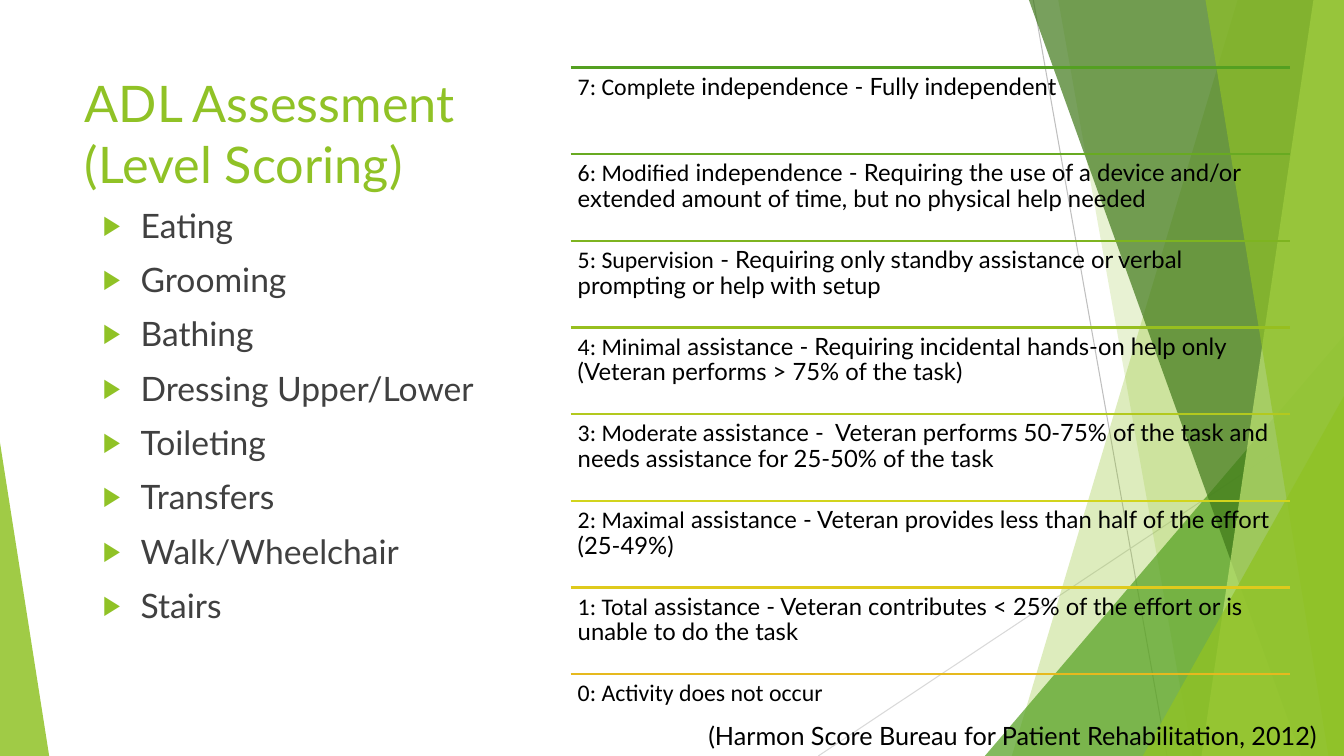
from dataclasses import dataclass

from lxml.etree import SubElement
from pptx import Presentation
from pptx.dml.color import RGBColor
from pptx.enum.shapes import MSO_CONNECTOR, MSO_SHAPE
from pptx.enum.text import MSO_ANCHOR, MSO_AUTO_SIZE, PP_ALIGN
from pptx.oxml.ns import qn
from pptx.util import Cm, Pt

GREEN = RGBColor(0x90, 0xC2, 0x26)
MID_GREEN = RGBColor(0x54, 0xA0, 0x21)
DARK_GREEN = RGBColor(0x3F, 0x78, 0x19)
LIGHT_GREEN = RGBColor(0xC0, 0xE4, 0x74)
GREY = RGBColor(0xBF, 0xBF, 0xBF)
LIGHT_GREY = RGBColor(0xD9, 0xD9, 0xD9)
TEXT_GREY = RGBColor(0x40, 0x40, 0x40)
BLACK = RGBColor(0, 0, 0)

WIDTH, HEIGHT = 33.87, 19.05
ROW_LEFT, ROW_WIDTH = 14.38, 18.13
ROW_TOP, LAST_ROW_TOP = 1.7, 16.99


@dataclass
class Facet:
    top_left: float
    bottom_left: float
    bottom_right: float
    color: RGBColor
    opacity: int


@dataclass
class Wedge:
    left: float
    top: float
    width: float
    apex: float
    color: RGBColor
    opacity: int


@dataclass
class Level:
    label: str
    detail: str
    color: RGBColor


FACETS_AND_WEDGES = [
    Facet(31.19, 25.5, WIDTH, GREEN, 30),
    Facet(26.67, 30.05, WIDTH, GREEN, 20),
    Wedge(24.82, 8.46, 9.05, 1, MID_GREEN, 72),
    Facet(25.93, 32.79, WIDTH, DARK_GREEN, 70),
    Facet(33.1, 30.28, WIDTH, LIGHT_GREEN, 70),
    Facet(30.38, 33.48, WIDTH, GREEN, 65),
    Wedge(28.8, 9.98, 5.07, 1, GREEN, 80),
    Wedge(0, 11.15, 1.24, 0, GREEN, 85),
]

ACTIVITIES = ["Eating", "Grooming", "Bathing", "Dressing Upper/Lower",
              "Toileting", "Transfers", "Walk/Wheelchair", "Stairs"]

LEVELS = [
    Level("7: Complete", " independence - Fully independent", MID_GREEN),
    Level("6: Modified", " independence - Requiring the use of a device and/or extended "
          "amount of time, but no physical help needed", RGBColor(0x68, 0xAA, 0x21)),
    Level("5: Supervision", " - Requiring only standby assistance or verbal prompting "
          "or help with setup", RGBColor(0x7E, 0xB4, 0x20)),
    Level("4: Minimal", " assistance - Requiring incidental hands-on help only "
          "(Veteran performs > 75% of the task)", RGBColor(0x97, 0xBF, 0x1F)),
    Level("3: Moderate ", "assistance -  Veteran performs 50-75% of the task and needs "
          "assistance for 25-50% of the task", RGBColor(0xB3, 0xC9, 0x1E)),
    Level("2: Maximal", " assistance - Veteran provides less than half of the effort "
          "(25-49%)", RGBColor(0xD2, 0xD4, 0x1D)),
    Level("1: Total", " assistance - Veteran contributes < 25% of the effort or is "
          "unable to do the task", RGBColor(0xDF, 0xCA, 0x1C)),
    Level("0: Activity does not occur", "", RGBColor(0xE6, 0xB9, 0x1E)),
]


def write(p, text: str, *, size: float, font: str = "Lato", color: RGBColor = BLACK) -> None:
    r = p.add_run()
    r.text = text
    r.font.size = Pt(size)
    r.font.name = font
    r.font.color.rgb = color


def place(sp, left: float, top: float, width: float, height: float) -> None:
    sp.left, sp.top, sp.width, sp.height = Cm(left), Cm(top), Cm(width), Cm(height)


def add_line(shapes, x1: float, y1: float, x2: float, y2: float,
             color: RGBColor, weight: float) -> None:
    line = shapes.add_connector(MSO_CONNECTOR.STRAIGHT, Cm(x1), Cm(y1), Cm(x2), Cm(y2))
    line.line.color.rgb = color
    line.line.width = Pt(weight)
    SubElement(line.element.spPr, qn("a:effectLst"))


def add_panel(shapes, panel: Facet | Wedge) -> None:
    if isinstance(panel, Facet):
        builder = shapes.build_freeform(Cm(panel.top_left), 0)
        builder.add_line_segments([(Cm(WIDTH), 0), (Cm(panel.bottom_right), Cm(HEIGHT)),
                                   (Cm(panel.bottom_left), Cm(HEIGHT))], close=True)
        sp = builder.convert_to_shape()
    else:
        sp = shapes.add_shape(MSO_SHAPE.ISOSCELES_TRIANGLE, Cm(panel.left), Cm(panel.top),
                              Cm(panel.width), Cm(HEIGHT - panel.top))
        sp.adjustments[0] = panel.apex
    sp.shadow.inherit = False
    sp.line.fill.background()
    sp.fill.solid()
    sp.fill.fore_color.rgb = panel.color
    color = next(sp.element.spPr.iter(qn("a:srgbClr")))
    SubElement(color, qn("a:alpha"), val=str(panel.opacity * 1000))


def add_bullet(p) -> None:
    pPr = p._p.get_or_add_pPr()
    pPr.set("marL", str(Cm(0.95)))
    pPr.set("indent", str(-Cm(0.95)))
    SubElement(SubElement(pPr, qn("a:buClr")), qn("a:srgbClr"), val=str(GREEN))
    SubElement(pPr, qn("a:buSzPct"), val="80000")
    SubElement(pPr, qn("a:buFont"), typeface="Arial")
    SubElement(pPr, qn("a:buChar"), char="▶")


def add_level(shapes, level: Level, top: float, height: float) -> None:
    add_line(shapes, ROW_LEFT, top, ROW_LEFT + ROW_WIDTH, top, level.color, 1.5)
    box = shapes.add_textbox(Cm(ROW_LEFT), Cm(top), Cm(ROW_WIDTH), Cm(height))
    tf = box.text_frame
    tf.word_wrap = True
    tf.margin_left = tf.margin_right = tf.margin_top = tf.margin_bottom = Cm(0.18)
    p = tf.paragraphs[0]
    p.line_spacing = 0.9
    write(p, level.label, size=17, font="Calibri")
    if level.detail:
        write(p, level.detail, size=17)


def fill_title(title) -> None:
    place(title, 1.88, 1.7, 10.54, 3.66)
    tf = title.text_frame
    tf.auto_size = MSO_AUTO_SIZE.NONE
    tf.vertical_anchor = MSO_ANCHOR.TOP
    p = tf.paragraphs[0]
    p.alignment = PP_ALIGN.LEFT
    write(p, "ADL Assessment", size=36, color=GREEN)
    p.add_line_break()
    write(p, "(Level Scoring)", size=36, color=GREEN)


def fill_activities(body) -> None:
    place(body, 2.34, 5.03, 10.08, 13)
    tf = body.text_frame
    tf.auto_size = MSO_AUTO_SIZE.NONE
    tf.vertical_anchor = MSO_ANCHOR.TOP
    for i, activity in enumerate(ACTIVITIES):
        p = tf.add_paragraph() if i else tf.paragraphs[0]
        p.space_before = Pt(10)
        add_bullet(p)
        write(p, activity, size=24, color=TEXT_GREY)


def main() -> None:
    prs = Presentation()
    prs.slide_width, prs.slide_height = Cm(WIDTH), Cm(HEIGHT)
    slide = prs.slides.add_slide(prs.slide_layouts[1])
    shapes = slide.shapes
    title, body = shapes.title, slide.placeholders[1]

    add_line(shapes, 26.04, 0, 29.41, HEIGHT, GREY, 0.75)
    add_line(shapes, WIDTH, 10.24, 20.62, HEIGHT, LIGHT_GREY, 0.75)
    for panel in FACETS_AND_WEDGES:
        add_panel(shapes, panel)

    fill_title(title)
    fill_activities(body)
    for sp in (title, body):
        sp.element.getparent().append(sp.element)

    pitch = (LAST_ROW_TOP - ROW_TOP) / (len(LEVELS) - 1)
    for i, level in enumerate(LEVELS):
        add_level(shapes, level, ROW_TOP + i * pitch, pitch)

    citation = shapes.add_textbox(Cm(17.6), Cm(18.03), Cm(16.76), Cm(1.02))
    citation.text_frame.word_wrap = True
    write(citation.text_frame.paragraphs[0],
          "(Harmon Score Bureau for Patient Rehabilitation, 2012)", size=18)

    prs.save("out.pptx")


if __name__ == "__main__":
    main()
